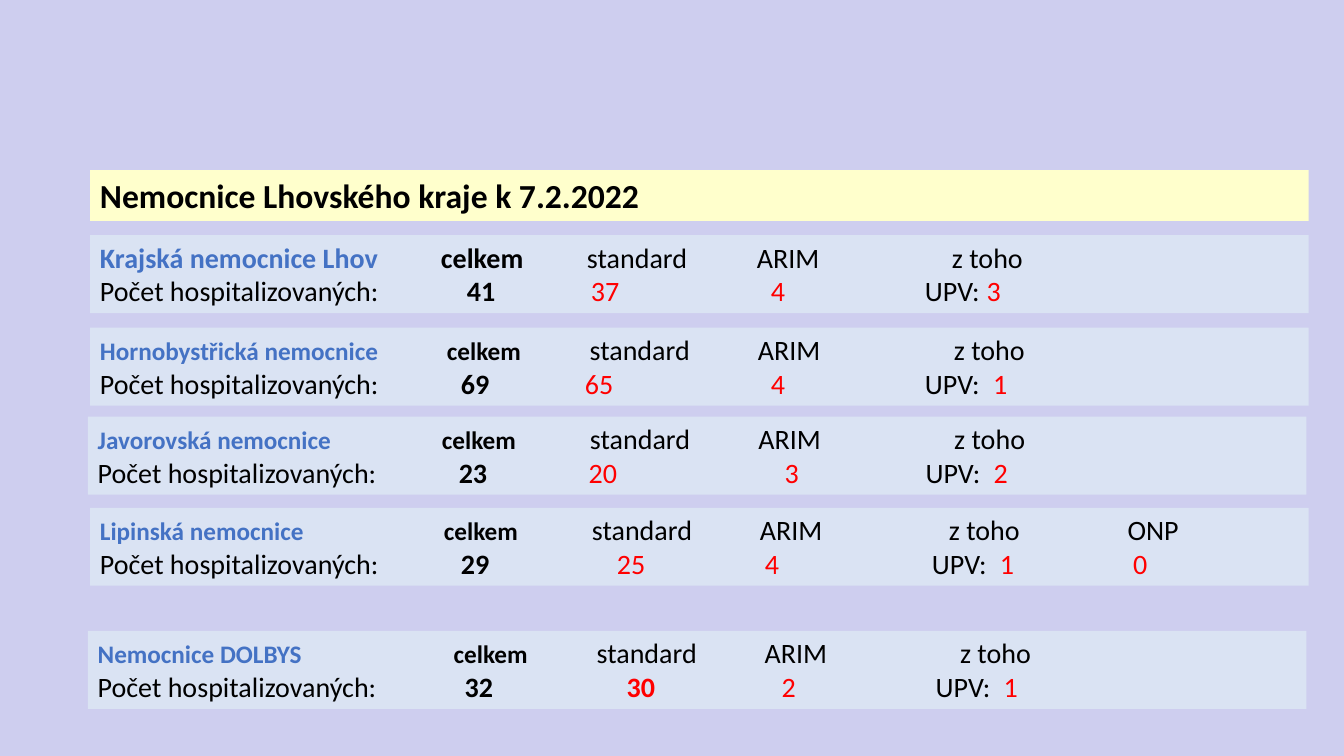
from dataclasses import dataclass

from lxml import etree
from pptx import Presentation
from pptx.dml.color import RGBColor
from pptx.enum.shapes import MSO_SHAPE
from pptx.enum.text import MSO_ANCHOR, PP_ALIGN
from pptx.oxml.ns import qn
from pptx.util import Pt

RECTANGLE = MSO_SHAPE.RECTANGLE
TOP, MIDDLE = MSO_ANCHOR.TOP, MSO_ANCHOR.MIDDLE
LEFT = PP_ALIGN.LEFT

BACKGROUND = "CECEEF"
TITLE_FILL = "FFFFCC"
HOSPITAL_FILL = "DAE3F3"
BLACK, BLUE, RED = "000000", "4472C4", "FF0000"
FONT = "Calibri"
BAND_WIDTH = 870.5


@dataclass(frozen=True)
class Entry:
    text: str
    tab: float = 0
    size: float = 20
    color: str = BLACK
    bold: bool = False


@dataclass(frozen=True)
class Hospital:
    name: str
    left: float
    top: float
    counts: tuple[str, ...]
    header_tabs: tuple[float, ...]
    count_tabs: tuple[float, ...]
    name_size: float = 18
    standard_bold: bool = False


HEADERS = ("celkem", "standard", "ARIM", "z toho", "ONP")
HOSPITALS = (
    Hospital("Krajská nemocnice Lhov", 64.3, 168, ("41", "37", "4", "UPV:", "3"),
             (243.6, 347.9, 469.3, 608.6), (262.1, 350.7, 479.3, 589.3, 633.4), name_size=20),
    Hospital("Hornobystřická nemocnice", 64.3, 234, ("69", "65", "4", "UPV:", "1"),
             (247.9, 349.8, 470, 610), (257.9, 346.4, 479.3, 589.3, 638)),
    Hospital("Javorovská nemocnice", 62.7, 297.6, ("23", "20", "3", "UPV:", "2"),
             (245.9, 351.6, 472, 611.8), (257.9, 350.7, 490.7, 591.4, 640)),
    Hospital("Lipinská nemocnice", 64.3, 362.7, ("29", "25", "4", "UPV:", "1", "0"),
             (245.7, 351.4, 471.4, 606.4, 734), (257.9, 369.3, 475, 594.3, 642.9, 738)),
    Hospital("Nemocnice DOLBYS", 62.7, 450.7, ("32", "30", "2", "UPV:", "1"),
             (254.3, 356.4, 476.4, 616), (262.1, 377.9, 488.6, 598.6, 647.1),
             standard_bold=True),
)


def rgb(value: str) -> RGBColor:
    return RGBColor.from_string(value)


def add_text(paragraph, text: str, *, size: float, color: str, bold: bool) -> None:
    run = paragraph.add_run()
    run.text = text
    run.font.name = FONT
    run.font.size = Pt(size)
    run.font.bold = bold
    run.font.color.rgb = rgb(color)


def write_line(paragraph, entries: list[Entry]) -> None:
    paragraph.alignment = LEFT
    stops = [entry.tab for entry in entries if entry.tab]
    if stops:
        tab_list = etree.SubElement(paragraph._p.get_or_add_pPr(), qn("a:tabLst"))
        for stop in stops:
            etree.SubElement(tab_list, qn("a:tab"), pos=str(int(Pt(stop))), algn="l")
    for entry in entries:
        text = f"\t{entry.text}" if entry.tab else entry.text
        add_text(paragraph, text, size=entry.size, color=entry.color, bold=entry.bold)


def add_band(slide, left: float, top: float, height: float, fill: str, anchor: MSO_ANCHOR,
             lines: list[list[Entry]]) -> None:
    band = slide.shapes.add_shape(RECTANGLE, Pt(left), Pt(top), Pt(BAND_WIDTH), Pt(height))
    band.shadow.inherit = False
    band.fill.solid()
    band.fill.fore_color.rgb = rgb(fill)
    band.line.fill.background()
    frame = band.text_frame
    frame.word_wrap = True
    frame.vertical_anchor = anchor
    for index, entries in enumerate(lines):
        paragraph = frame.add_paragraph() if index else frame.paragraphs[0]
        write_line(paragraph, entries)


def add_hospital(slide, hospital: Hospital) -> None:
    header = [Entry(hospital.name, size=hospital.name_size, color=BLUE, bold=True)]
    for label, tab in zip(HEADERS, hospital.header_tabs):
        total = label == "celkem"
        header.append(Entry(label, tab, hospital.name_size if total else 20, bold=total))
    counts = [Entry("Počet hospitalizovaných:")]
    for column, (count, tab) in enumerate(zip(hospital.counts, hospital.count_tabs)):
        total = column == 0
        color = BLACK if total or count == "UPV:" else RED
        bold = total or (column == 1 and hospital.standard_bold)
        counts.append(Entry(count, tab, color=color, bold=bold))
    add_band(slide, hospital.left, hospital.top, 55.7, HOSPITAL_FILL, TOP, [header, counts])


def main() -> None:
    presentation = Presentation()
    presentation.slide_width = Pt(960)
    presentation.slide_height = Pt(540)
    slide = presentation.slides.add_slide(presentation.slide_layouts[6])
    slide.background.fill.solid()
    slide.background.fill.fore_color.rgb = rgb(BACKGROUND)
    title = Entry("Nemocnice Lhovského kraje k 7.2.2022", size=24, bold=True)
    add_band(slide, 64.3, 121.5, 36.3, TITLE_FILL, MIDDLE, [[title]])
    for hospital in HOSPITALS:
        add_hospital(slide, hospital)
    presentation.save("out.pptx")


if __name__ == "__main__":
    main()
